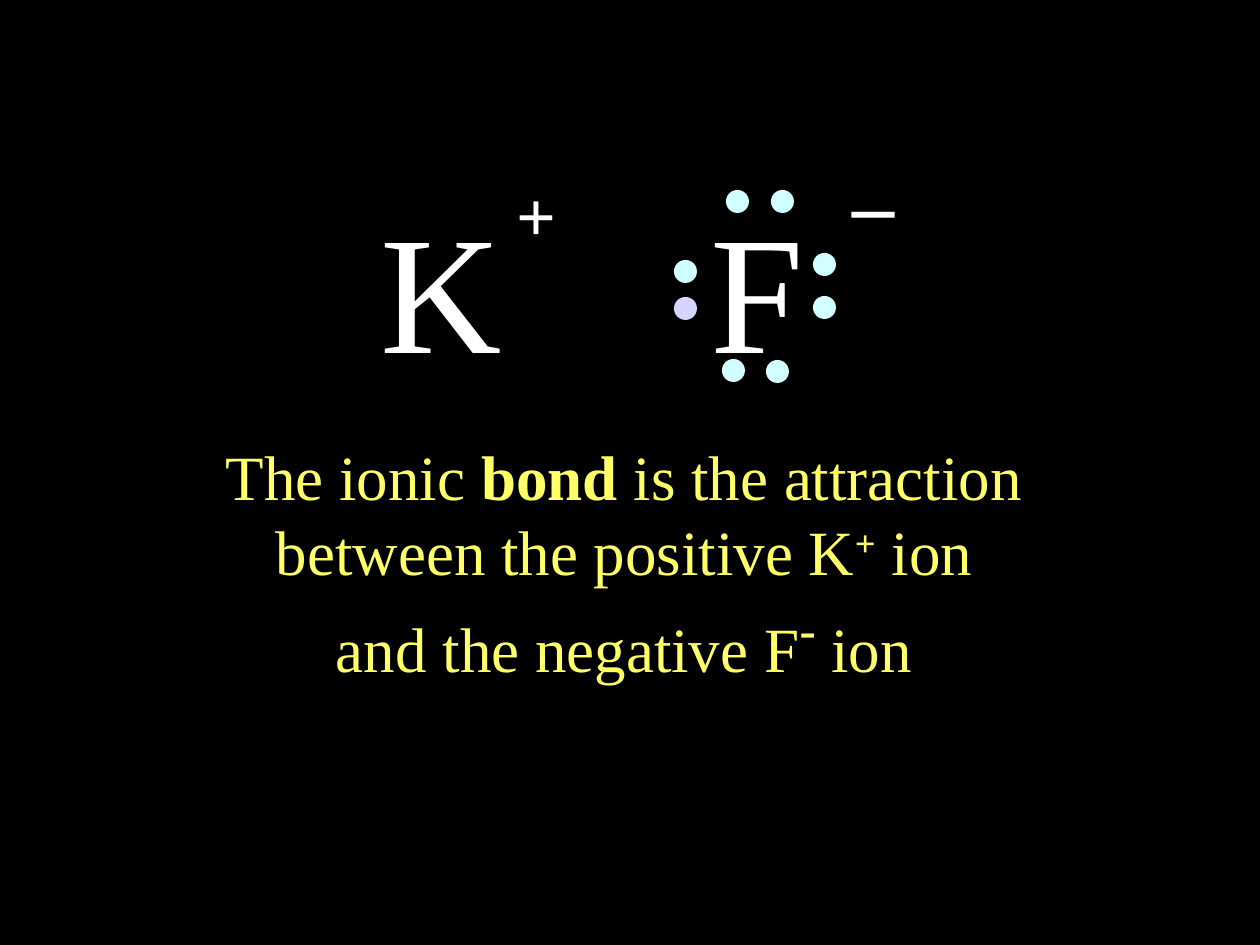
from pptx import Presentation
from pptx.dml.color import RGBColor
from pptx.enum.shapes import MSO_SHAPE
from pptx.enum.text import MSO_AUTO_SIZE, PP_ALIGN
from pptx.util import Pt

PX = 914400 // 126
FONT = "Times New Roman"
COLORS = {
    "background": "000000",
    "symbol": "FFFFFF",
    "caption": "FFFF66",
    "electron": "D1FFFF",
    "gained": "D5D5FF",
}
DOT = 23
ELECTRONS = [
    (726, 190), (771, 190),
    (813, 253), (813, 296),
    (722, 359), (766, 360),
    (674, 260),
]
GAINED_ELECTRON = (674, 297)
# text, box in px, size in points, bold
SYMBOLS = [
    ("K", (368, 179, 146, 214), 96, False),
    ("+", (504, 165, 66, 97), 40, True),
    ("F", (698, 179, 118, 214), 96, False),
    ("_", (840, 116, 67, 113), 48, True),
]
# text, size in points, bold, superscript
CAPTION = [
    [("The ionic ", 36, False, False), ("bond", 36, True, False),
     (" is the attraction", 36, False, False)],
    [("between the positive K", 36, False, False), ("+", 36, True, True),
     (" ion", 36, False, False)],
    [("and the negative F", 36, False, False), ("-", 48, True, True),
     (" ion", 36, False, False)],
]


def rgb(name):
    return RGBColor.from_string(COLORS[name])


def add_text(s, box, lines, color, align=PP_ALIGN.LEFT):
    tf = s.shapes.add_textbox(*(v * PX for v in box)).text_frame
    tf.word_wrap = False
    tf.auto_size = MSO_AUTO_SIZE.SHAPE_TO_FIT_TEXT
    for i, line in enumerate(lines):
        p = tf.add_paragraph() if i else tf.paragraphs[0]
        p.alignment = align
        for text, size, bold, superscript in line:
            r = p.add_run()
            r.text = text
            r.font.name = FONT
            r.font.size = Pt(size)
            r.font.bold = bold
            r.font.color.rgb = rgb(color)
            if superscript:
                r._r.get_or_add_rPr().set("baseline", "30000")


def add_electron(s, x, y, color="electron"):
    sp = s.shapes.add_shape(MSO_SHAPE.OVAL, x * PX, y * PX, DOT * PX, DOT * PX)
    sp.shadow.inherit = False
    sp.fill.solid()
    sp.fill.fore_color.rgb = rgb(color)
    sp.line.fill.background()


def main():
    prs = Presentation()
    prs.slide_width = 1260 * PX
    prs.slide_height = 945 * PX
    s = prs.slides.add_slide(prs.slide_layouts[6])
    s.background.fill.solid()
    s.background.fill.fore_color.rgb = rgb("background")

    for text, box, size, bold in SYMBOLS:
        add_text(s, box, [[(text, size, bold, False)]], "symbol")
    for x, y in ELECTRONS:
        add_electron(s, x, y)
    add_electron(s, *GAINED_ELECTRON, color="gained")
    add_text(s, (213, 431, 822, 239), CAPTION, "caption", PP_ALIGN.CENTER)

    prs.save("out.pptx")


if __name__ == "__main__":
    main()
